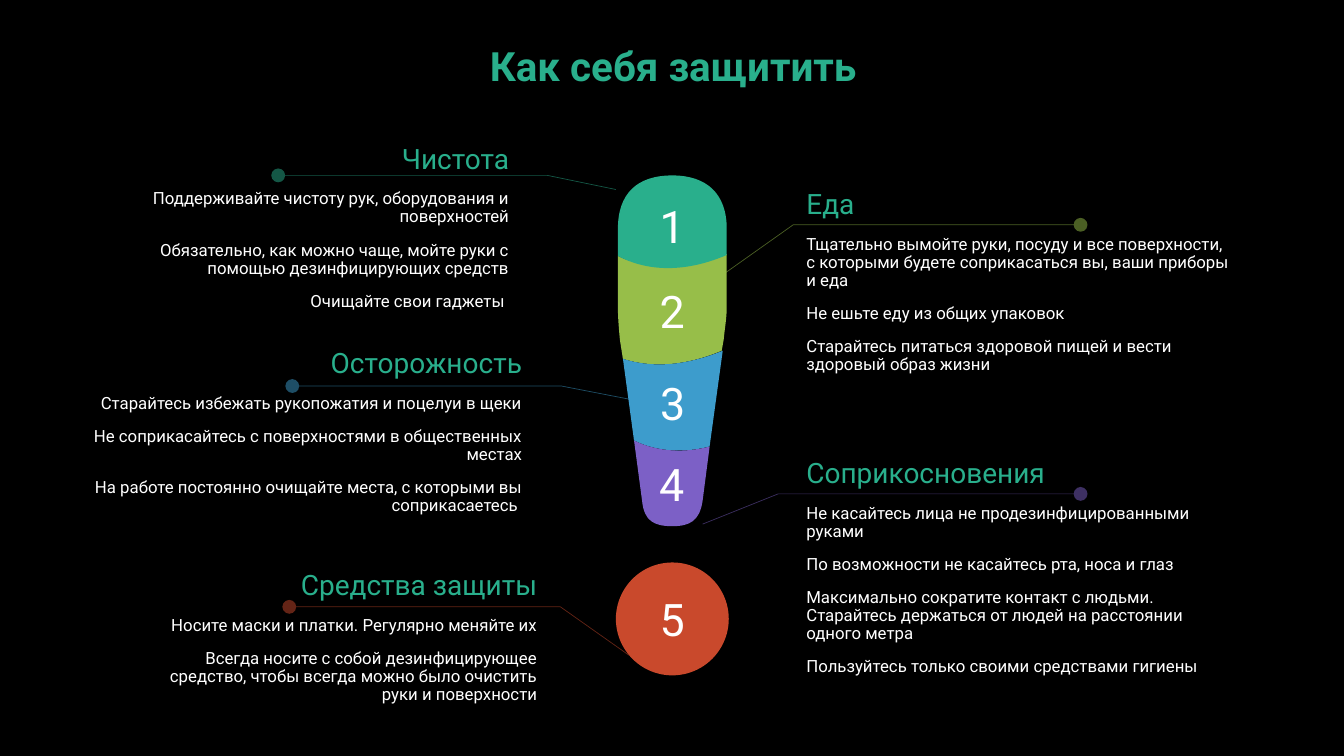
"""Build the slide on protecting yourself: a numbered exclamation mark with five linked notes."""
from lxml import etree
from pptx import Presentation
from pptx import util as u
from pptx.dml.color import RGBColor
from pptx.enum import shapes, text
from pptx.oxml import ns

BLACK = RGBColor(0x00, 0x00, 0x00)
WHITE = RGBColor(0xFF, 0xFF, 0xFF)
GREEN = RGBColor(0x29, 0xAF, 0x8C)
LIME = RGBColor(0x97, 0xBE, 0x49)
BLUE = RGBColor(0x3D, 0x9C, 0xCC)
VIOLET = RGBColor(0x7C, 0x60, 0xC6)
RED = RGBColor(0xC9, 0x49, 0x2C)

LEFT, CENTER, RIGHT = text.PP_ALIGN.LEFT, text.PP_ALIGN.CENTER, text.PP_ALIGN.RIGHT
TITLE = "Как себя защитить"
TITLE_BOX = (0.93, 0.4, 11.5, 0.56)
DOT_BOX = (6.11, 5.58, 1.12, 1.12)

TITLE_FORMAT = {"size": u.Pt(28.8), "bold": True, "name": "Roboto"}
NUMBER_FORMAT = {"size": u.Pt(32), "name": "Roboto"}
HEADING_FORMAT = {"size": u.Pt(20), "name": "Roboto"}
BODY_FORMAT = {"size": u.Pt(12), "name": "Roboto"}
NOTE_FRAME = {
    "word_wrap": True,
    "auto_size": text.MSO_AUTO_SIZE.SHAPE_TO_FIT_TEXT,
    "margin_left": u.Inches(0.13),
    "margin_right": u.Inches(0.13),
    "margin_top": u.Inches(0.05),
    "margin_bottom": u.Inches(0.05),
}

# Two numbers make a straight side; six make a curve with two control points.
SEGMENTS = [
    ("2", LIME, [(7.16, 3.48), (7.18, 3.37), (7.19, 3.26, 7.21, 3.15, 7.21, 3.05), (7.21, 2.52),
                 (6.74, 2.72, 6.38, 2.66, 6.13, 2.54), (6.13, 3.05),
                 (6.13, 3.15, 6.14, 3.26, 6.15, 3.37), (6.18, 3.56),
                 (6.43, 3.64, 6.75, 3.65, 7.16, 3.48)]),
    ("1", GREEN, [(7.21, 2.53), (7.21, 2.27), (7.21, 1.92, 7.01, 1.74, 6.67, 1.74),
                  (6.32, 1.74, 6.13, 1.92, 6.13, 2.27), (6.13, 2.54),
                  (6.38, 2.67, 6.74, 2.73, 7.21, 2.53)]),
    ("3", BLUE, [(6.18, 3.56), (6.29, 4.37), (6.47, 4.46, 6.73, 4.51, 7.04, 4.43), (7.17, 3.48),
                 (6.75, 3.65, 6.43, 3.64, 6.18, 3.56)]),
    ("4", VIOLET, [(6.29, 4.37), (6.37, 4.97), (6.39, 5.17, 6.49, 5.22, 6.67, 5.22),
                   (6.84, 5.22, 6.94, 5.17, 6.97, 4.97), (7.04, 4.43),
                   (6.73, 4.51, 6.47, 4.46, 6.29, 4.37)]),
]

NOTES = [
    (GREEN, [(6.11, 1.88), (5.43, 1.74), (2.76, 1.74)], (0.93, 1.39, 4.25, 1.78), RIGHT, "Чистота", [
        "Поддерживайте чистоту рук, оборудования и поверхностей",
        "Обязательно, как можно чаще, мойте руки с помощью дезинфицирующих средств",
        "Очищайте свои гаджеты "]),
    (LIME, [(7.15, 2.74), (7.87, 2.23), (10.72, 2.23)], (7.87, 1.84, 4.5, 1.96), LEFT, "Еда", [
        "Тщательно вымойте руки, посуду и все поверхности, с которыми будете соприкасаться вы, "
        "ваши приборы и еда",
        "Не ешьте еду из общих упаковок",
        "Старайтесь питаться здоровой пищей и вести здоровый образ жизни"]),
    (BLUE, [(6.24, 3.96), (5.57, 3.83), (2.9, 3.83)], (0.45, 3.42, 4.86, 1.78), RIGHT, "Осторожность", [
        "Старайтесь избежать рукопожатия и поцелуи в щеки",
        "Не соприкасайтесь с поверхностями в общественных местах",
        "На работе постоянно очищайте места, с которыми вы соприкасаетесь "]),
    (VIOLET, [(6.97, 5.2), (7.72, 4.9), (10.72, 4.9)], (7.87, 4.51, 4.53, 2.29), LEFT, "Соприкосновения", [
        "Не касайтесь лица не продезинфицированными руками",
        "По возможности не касайтесь рта, носа и глаз",
        "Максимально сократите контакт с людьми. Старайтесь держаться от людей на расстоянии "
        "одного метра",
        "Пользуйтесь только своими средствами гигиены"]),
    (RED, [(6.24, 6.5), (5.56, 6.02), (2.87, 6.02)], (1.26, 5.62, 4.2, 1.44), RIGHT, "Средства защиты", [
        "Носите маски и платки. Регулярно меняйте их",
        "Всегда носите с собой дезинфицирующее средство, чтобы всегда можно было очистить "
        "руки и поверхности"]),
]


def set_all(target, values):
    for name, value in values.items():
        setattr(target, name, value)


def write(paragraph, words, values, color, alignment):
    paragraph.alignment = alignment
    run = paragraph.add_run()
    run.text = words
    set_all(run.font, values)
    run.font.color.rgb = color


def add_outline(slide, outline, close):
    points = [step[i:i + 2] for step in outline for i in range(0, len(step), 2)]
    lengths = [(u.Inches(x), u.Inches(y)) for x, y in points]
    builder = slide.shapes.build_freeform(*lengths[0])
    builder.add_line_segments(lengths[1:], close=close)
    shape = builder.convert_to_shape()
    shape.shadow.inherit = False
    sides = iter(list(shape.element.iter(ns.qn("a:lnTo"))))
    for step in outline[1:]:
        side = next(sides)
        if len(step) == 6:
            curve = etree.Element(ns.qn("a:cubicBezTo"))
            side.addprevious(curve)
            for control in (side, next(sides), next(sides)):
                curve.append(control[0])
                control.getparent().remove(control)
    return shape


def add_number(shape, number, color):
    shape.shadow.inherit = False
    shape.fill.solid()
    shape.fill.fore_color.rgb = color
    shape.line.fill.background()
    shape.text_frame.vertical_anchor = text.MSO_ANCHOR.MIDDLE
    write(shape.text_frame.paragraphs[0], number, NUMBER_FORMAT, WHITE, CENTER)


def add_leader(slide, points, color):
    leader = add_outline(slide, points, False)
    leader.fill.background()
    leader.line.width = u.Pt(0.5)
    leader.line.color.rgb = color
    line = leader.element.find(".//" + ns.qn("a:ln"))
    etree.SubElement(line.find(".//" + ns.qn("a:srgbClr")), ns.qn("a:alpha"), val="50000")
    etree.SubElement(line, ns.qn("a:tailEnd"), type="oval", w="lg", len="lg")


def add_note(slide, box, alignment, heading, items):
    frame = slide.shapes.add_textbox(*map(u.Inches, box)).text_frame
    set_all(frame, NOTE_FRAME)
    frame.paragraphs[0].line_spacing = 0.9
    write(frame.paragraphs[0], heading, HEADING_FORMAT, GREEN, alignment)
    for item in items:
        paragraph = frame.add_paragraph()
        set_all(paragraph, {"line_spacing": 0.9, "space_before": u.Pt(10.7)})
        write(paragraph, item, BODY_FORMAT, WHITE, alignment)


def main():
    presentation = Presentation()
    set_all(presentation, {"slide_width": u.Inches(40 / 3), "slide_height": u.Inches(7.5)})
    slide = presentation.slides.add_slide(presentation.slide_layouts[6])
    slide.background.fill.solid()
    slide.background.fill.fore_color.rgb = BLACK

    dot = slide.shapes.add_shape(shapes.MSO_SHAPE.OVAL, *map(u.Inches, DOT_BOX))
    add_number(dot, "5", RED)
    for number, color, outline in SEGMENTS:
        add_number(add_outline(slide, outline, True), number, color)
    for color, points, box, alignment, heading, items in NOTES:
        add_leader(slide, points, color)
        add_note(slide, box, alignment, heading, items)

    frame = slide.shapes.add_textbox(*map(u.Inches, TITLE_BOX)).text_frame
    set_all(frame, {"word_wrap": True, "vertical_anchor": text.MSO_ANCHOR.MIDDLE})
    frame.paragraphs[0].line_spacing = 0.9
    write(frame.paragraphs[0], TITLE, TITLE_FORMAT, GREEN, CENTER)
    presentation.save("out.pptx")


if __name__ == "__main__":
    main()
